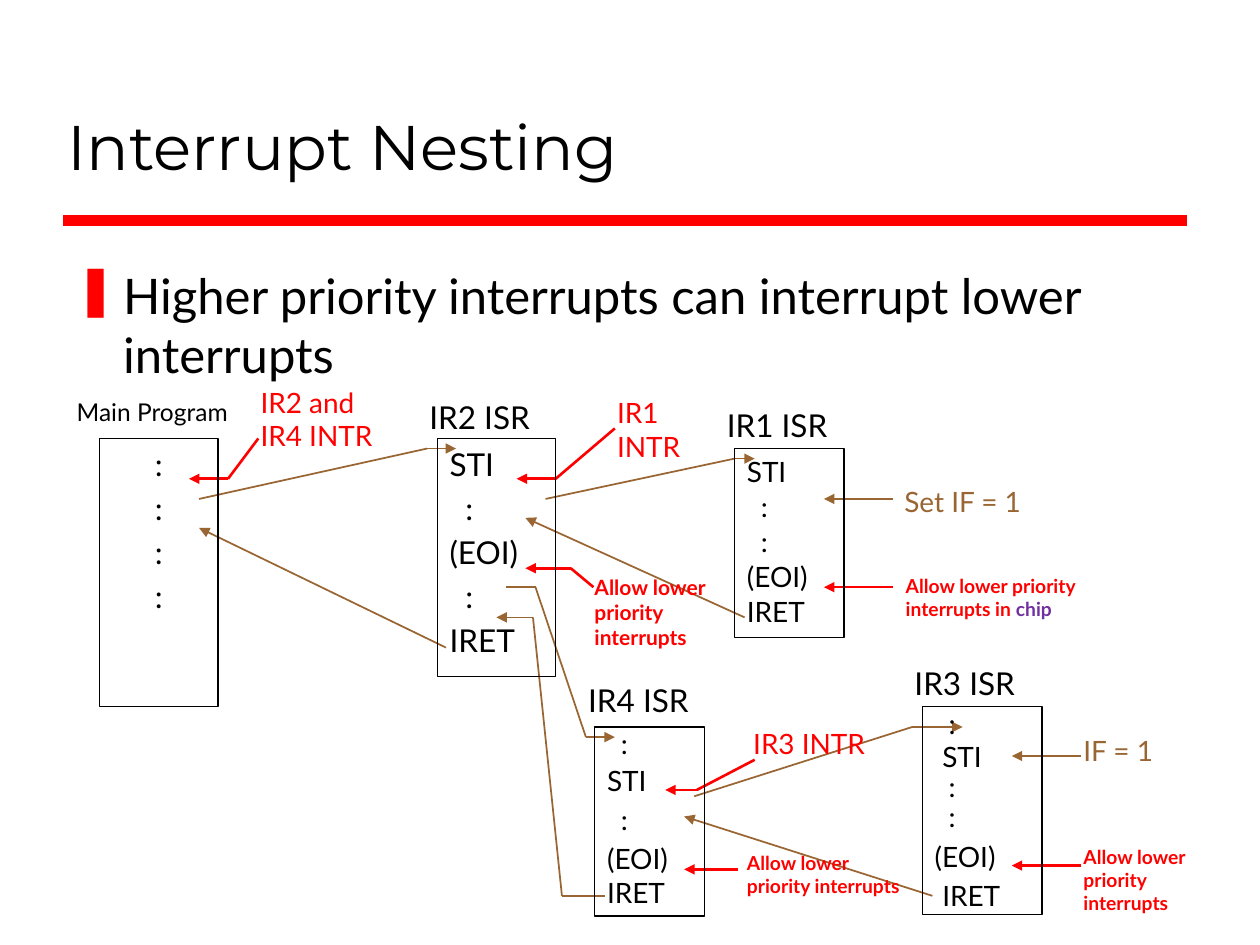
from dataclasses import dataclass
from itertools import pairwise

from lxml.etree import SubElement
from pptx import Presentation
from pptx.dml.color import RGBColor
from pptx.enum.shapes import MSO_CONNECTOR, MSO_SHAPE
from pptx.enum.text import MSO_ANCHOR, PP_ALIGN
from pptx.oxml.ns import qn
from pptx.util import Inches, Pt

BLACK = RGBColor(0x00, 0x00, 0x00)
RED = RGBColor(0xFF, 0x00, 0x00)
BROWN = RGBColor(0x99, 0x66, 0x33)
PURPLE = RGBColor(0x70, 0x30, 0xA0)

SLIDE_WIDTH, SLIDE_HEIGHT = Inches(10), Inches(7.5)
COLUMNS, ROWS = 100, 75
ALLOW = "Allow lower priority interrupts"


@dataclass(frozen=True)
class Area:
    column: float
    row: float
    width: float
    height: float

    def emu(self) -> tuple[int, int, int, int]:
        return across(self.column), down(self.row), across(self.width), down(self.height)


@dataclass(frozen=True)
class Span:
    text: str
    color: RGBColor = BLACK
    size: float = 16
    bold: bool = False
    font: str = "Lato"


@dataclass(frozen=True)
class Line:
    """A line of code; before and after are shares of the type size."""
    text: str
    before: float = 0.2
    after: float = 0
    indent: float = 0
    spacing: float = 1


@dataclass(frozen=True)
class Routine:
    name: str
    label: Area
    area: Area
    lines: tuple[Line, ...]
    size: float = 16
    label_size: float = 18
    align: PP_ALIGN = PP_ALIGN.LEFT
    inset: float = 0.5


@dataclass(frozen=True)
class Note:
    area: Area
    spans: tuple[Span, ...]
    wrap: bool = True


@dataclass(frozen=True)
class Route:
    """A bent line through the points; the arrowhead is at the last one."""
    color: RGBColor
    points: tuple[tuple[float, float], ...]
    weight: float = 1


def across(columns: float) -> int:
    return round(SLIDE_WIDTH * columns / COLUMNS)


def down(rows: float) -> int:
    return round(SLIDE_HEIGHT * rows / ROWS)


def add_span(para, span: Span) -> None:
    run = para.add_run()
    run.text = span.text
    font = run.font
    font.name, font.size, font.bold = span.font, Pt(span.size), span.bold
    font.color.rgb = span.color


def draw_note(page, note: Note):
    box = page.shapes.add_textbox(*note.area.emu())
    box.text_frame.word_wrap = note.wrap
    para = box.text_frame.paragraphs[0]
    para.space_before = Pt(0.2 * note.spans[0].size)
    for span in note.spans:
        add_span(para, span)
    return box


def draw_routine(page, routine: Routine) -> None:
    box = page.shapes.add_shape(MSO_SHAPE.RECTANGLE, *routine.area.emu())
    box.shadow.inherit = False
    box.fill.background()
    box.line.color.rgb = BLACK
    box.line.width = Pt(0.75)
    frame = box.text_frame
    frame.word_wrap = True
    frame.vertical_anchor = MSO_ANCHOR.TOP
    frame.margin_top = frame.margin_bottom = down(routine.inset)
    for number, line in enumerate(routine.lines):
        para = frame.add_paragraph() if number else frame.paragraphs[0]
        para.alignment = routine.align
        para.line_spacing = line.spacing
        para.space_before = Pt(line.before * routine.size)
        para.space_after = Pt(line.after * routine.size)
        para._p.get_or_add_pPr().set("marL", str(across(line.indent)))
        add_span(para, Span(line.text, size=routine.size))
    draw_note(page, Note(routine.label, (Span(routine.name, size=routine.label_size),), wrap=False))


def draw_route(page, route: Route, arrow: bool = True) -> None:
    for start, end in pairwise(route.points):
        line = page.shapes.add_connector(
            MSO_CONNECTOR.STRAIGHT,
            across(start[0]), down(start[1]), across(end[0]), down(end[1]))
        line.line.color.rgb = route.color
        line.line.width = Pt(route.weight)
        if arrow and end == route.points[-1]:
            SubElement(line.line._get_or_add_ln(), qn("a:tailEnd"), type="triangle")
        SubElement(line._element.spPr, qn("a:effectLst"))


def draw_heading(page) -> None:
    draw_route(page, Route(RED, ((5, 17.5), (94.2, 17.5)), 6), arrow=False)
    title = draw_note(page, Note(Area(4.4, 2.5, 89.7, 12.5),
                                 (Span("Interrupt Nesting", size=36, font="Montserrat"),)))
    title.text_frame.vertical_anchor = MSO_ANCHOR.BOTTOM
    body = draw_note(page, Note(Area(5, 20.6, 89.4, 45.6), (
        Span("Higher priority interrupts can interrupt lower interrupts", size=28),)))
    settings = body.text_frame.paragraphs[0]._p.get_or_add_pPr()
    settings.set("marL", str(across(3.8)))
    settings.set("indent", str(-across(3.8)))
    color = SubElement(settings, qn("a:buClr"))
    SubElement(color, qn("a:srgbClr"), val=str(RED))
    SubElement(settings, qn("a:buChar"), char="❚")


DOTS = Line(":", indent=1.25)
TIGHT_DOTS = Line(":", 0.05, indent=1.1)
CLOSE_DOTS = Line(":", 0, indent=1.1, spacing=0.9)

ROUTINES = (
    Routine("Main Program", Area(5.1, 31, 14, 3.4), Area(7.9, 34.8, 9.4, 21.3),
            (Line(":"),) * 4, size=18, label_size=14, align=PP_ALIGN.CENTER),
    Routine("IR2 ISR", Area(33.1, 31.1, 10.6, 4), Area(34.7, 34.8, 9.4, 18.9),
            (Line("STI"), DOTS, Line("(EOI)"), DOTS, Line("IRET")), size=18),
    Routine("IR1 ISR", Area(56.7, 31.7, 10.6, 4), Area(58.3, 35.6, 8.7, 15),
            (Line("STI"), TIGHT_DOTS, TIGHT_DOTS, Line("(EOI)", 0.05), Line("IRET", 0.05))),
    Routine("IR4 ISR", Area(45.7, 53.6, 10.6, 4), Area(47.2, 57.7, 8.7, 15),
            (Line(":", 0.1, indent=1.1), Line("STI", 0.1), Line(":", 0.2, 0.2, 1.1),
             Line("(EOI)", 0), Line("IRET", 0)), inset=0),
    Routine("IR3 ISR", Area(71.6, 52.2, 10.6, 4), Area(73.2, 56.1, 9.5, 16.5),
            (Line(":", 0, indent=1.1, spacing=0.8), Line("STI", 0, indent=0.6),
             CLOSE_DOTS, CLOSE_DOTS, Line("(EOI)"), Line("IRET", indent=0.6))),
)

NOTES = (
    Note(Area(19.7, 30.1, 11.9, 6.4), (Span("IR2 and IR4 INTR", RED),)),
    Note(Area(48, 30.9, 10.3, 6.4), (Span("IR1 INTR", RED),)),
    Note(Area(58.8, 57.2, 15, 3.7), (Span("IR3 INTR", RED),)),
    Note(Area(70.8, 38, 14.2, 3.7), (Span("Set IF = 1", BROWN),)),
    Note(Area(85, 57.7, 9.8, 3.7), (Span("IF = 1", BROWN),)),
    Note(Area(46.2, 45.1, 13.3, 7.1), (Span(ALLOW, RED, 12, True),)),
    Note(Area(58.3, 67.1, 14.2, 6.6), (Span(ALLOW, RED, 11, True),)),
    Note(Area(85, 66.6, 12.2, 6.6), (Span(ALLOW, RED, 11, True),)),
    Note(Area(70.9, 45.1, 17.7, 4.7), (Span(ALLOW + " in ", RED, 11, True),
                                       Span("chip", PURPLE, 11, True))),
)

ROUTES = (
    # Calls
    Route(BROWN, ((15.8, 39.6), (33.9, 35.6), (36.2, 35.6))),
    Route(BROWN, ((43.3, 39.6), (58.3, 36.4), (59.9, 36.4))),
    Route(BROWN, ((40.2, 46.6), (42.5, 46.6), (46.5, 58.5), (48.8, 58.5))),
    Route(BROWN, ((55.1, 63.2), (72.4, 57.7), (76.4, 57.7))),
    # Returns
    Route(BROWN, ((35.4, 51.4), (15.8, 41.9))),
    Route(BROWN, ((59.1, 49), (41.7, 41.1))),
    Route(BROWN, ((74, 71.1), (54.3, 64.8))),
    Route(BROWN, ((48, 71.1), (44.6, 71.1), (42.3, 49), (39.4, 49))),
    # Interrupt requests
    Route(RED, ((20.5, 34.8), (18.1, 38), (15, 38)), 1.5),
    Route(RED, ((48.8, 34), (44.1, 38), (41, 38)), 1.5),
    Route(RED, ((59.9, 60.3), (55.3, 62.7), (52.8, 62.7)), 1.5),
    # Remarks on single instructions
    Route(RED, ((47.1, 46.6), (45.3, 45.1), (41.7, 45.1)), 1.5),
    Route(RED, ((58.6, 69), (54.3, 69)), 1.5),
    Route(RED, ((70.9, 46.6), (65.4, 46.6)), 1.5),
    Route(RED, ((85.8, 68.7), (80.3, 68.7)), 1.5),
    Route(BROWN, ((70.9, 39.6), (65.4, 39.6)), 1.5),
    Route(BROWN, ((85.8, 60), (80.3, 60)), 1.5),
)


def main() -> None:
    deck = Presentation()
    deck.slide_width, deck.slide_height = SLIDE_WIDTH, SLIDE_HEIGHT
    page = deck.slides.add_slide(deck.slide_layouts[6])
    draw_heading(page)
    for route in ROUTES:
        draw_route(page, route)
    for routine in ROUTINES:
        draw_routine(page, routine)
    for note in NOTES:
        draw_note(page, note)
    deck.save("out.pptx")


if __name__ == "__main__":
    main()
